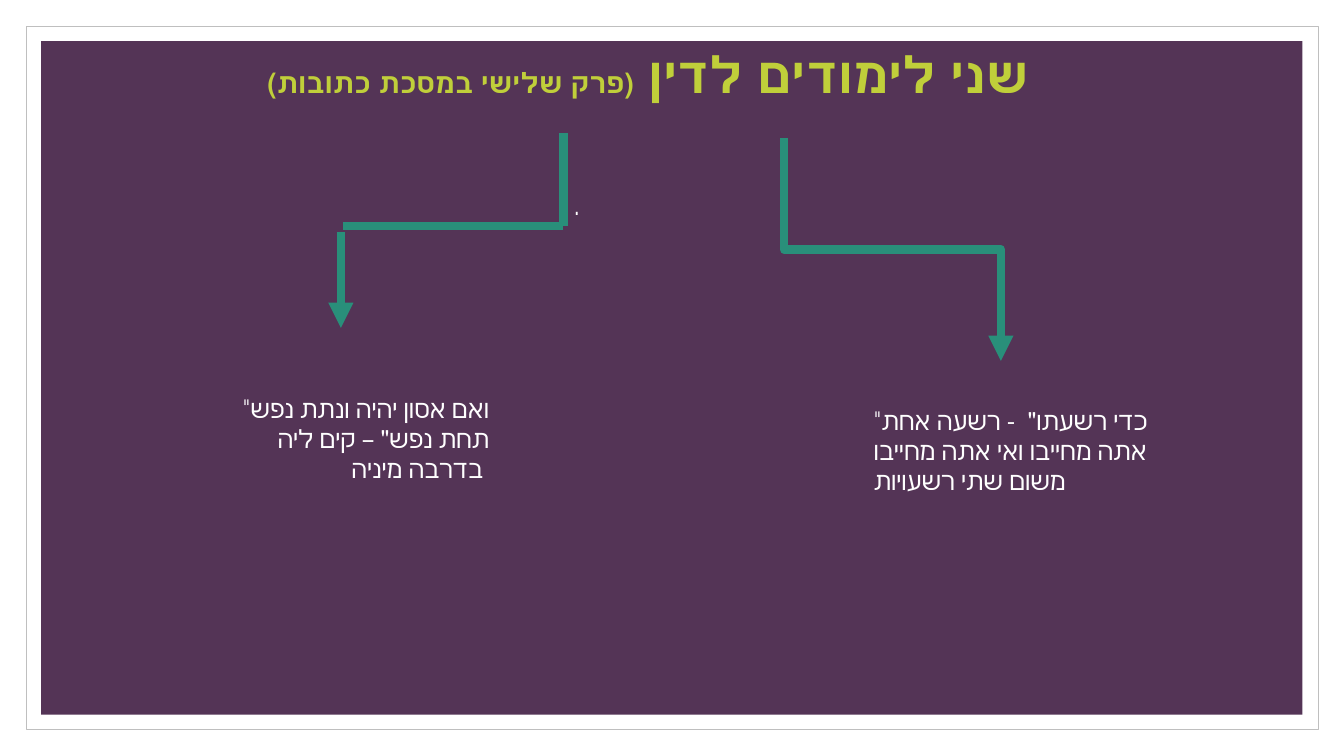
"""Build the slide on the two sources for the ruling."""
from dataclasses import dataclass

from lxml import etree
from pptx import Presentation
from pptx.dml.color import RGBColor
from pptx.enum.shapes import MSO_CONNECTOR, MSO_SHAPE
from pptx.enum.text import MSO_ANCHOR, MSO_AUTO_SIZE, PP_ALIGN
from pptx.oxml.ns import qn
from pptx.util import Cm, Pt

RECT = MSO_SHAPE.RECTANGLE
LINE, BENT = MSO_CONNECTOR.STRAIGHT, MSO_CONNECTOR.ELBOW
LEFT, MID, RIGHT = PP_ALIGN.LEFT, PP_ALIGN.CENTER, PP_ALIGN.RIGHT


@dataclass(frozen=True)
class Theme:
    white: RGBColor = RGBColor(0xFF, 0xFF, 0xFF)
    edge: RGBColor = RGBColor(0xBF, 0xBF, 0xBF)
    plum: RGBColor = RGBColor(0x54, 0x34, 0x56)
    lime: RGBColor = RGBColor(0xC0, 0xCF, 0x3A)
    teal: RGBColor = RGBColor(0x29, 0x8F, 0x7A)
    font: str = "TeX Gyre Adventor"
    head: Pt = Pt(36)
    sub: Pt = Pt(20)
    body: Pt = Pt(18)
    thin: Pt = Pt(0.5)
    thick: Pt = Pt(6)


theme = Theme()


def style(run, size, color):
    run.font.name = theme.font
    run.font.size = size
    run.font.color.rgb = color


def link(kind, ends, arrow):
    line = slide.shapes.add_connector(kind, *map(Cm, ends))
    line.line.color.rgb = theme.teal
    line.line.width = theme.thick
    props = line.element.spPr
    if arrow:
        etree.SubElement(props.find(qn("a:ln")), qn("a:tailEnd"), type="triangle")
    etree.SubElement(props, qn("a:effectLst"))
    return line


deck = Presentation()
deck.slide_width, deck.slide_height = Cm(33.87), Cm(19.05)
slide = deck.slides.add_slide(deck.slide_layouts[5])

panels = [
    ((0.66, 0.66, 32.56, 17.73), theme.white, theme.edge),
    ((1.04, 1.04, 31.78, 16.97), theme.plum, None),
]
for box, fill, edge in panels:
    panel = slide.shapes.add_shape(RECT, *map(Cm, box))
    panel.shadow.inherit = False
    panel.fill.solid()
    panel.fill.fore_color.rgb = fill
    if edge:
        panel.line.color.rgb = edge
        panel.line.width = theme.thin
    else:
        panel.line.fill.background()

title = slide.shapes.title
slide.shapes.element.append(title.element)
title.left, title.top, title.width, title.height = map(Cm, (3.19, 0.76, 26.29, 2.39))
frame = title.text_frame
frame.auto_size = MSO_AUTO_SIZE.NONE
frame.vertical_anchor = MSO_ANCHOR.MIDDLE
para = frame.paragraphs[0]
para.alignment = MID
para.line_spacing = 0.9
para.element.get_or_add_pPr().set("rtl", "1") if hasattr(para, "element") else para._p.get_or_add_pPr().set("rtl", "1")
for words, size in [
    ("שני לימודים לדין ", theme.head),
    ("(פרק שלישי במסכת כתובות)", theme.sub),
]:
    run = para.add_run()
    run.text = words
    style(run, size, theme.lime)
    run.font.bold = True
    rim = etree.Element(qn("a:ln"), w=str(Pt(1)))
    paint = etree.SubElement(rim, qn("a:solidFill"))
    etree.SubElement(paint, qn("a:srgbClr"), val=str(theme.teal))
    run.font.fill
    run._r.get_or_add_rPr().insert(0, rim)

notes = [
    (".", (14.2, 4.67, 16.94, 1.02), LEFT),
    (
        "\"כדי רשעתו\"  - רשעה אחת אתה מחייבו ואי אתה מחייבו משום שתי רשעויות",
        (21.77, 10.08, 7.52, 2.57),
        LEFT,
    ),
    (
        "\"ואם אסון יהיה ונתת נפש תחת נפש\" – קים ליה בדרבה מיניה ",
        (4.83, 9.78, 7.75, 2.57),
        RIGHT,
    ),
]
for words, box, align in notes:
    frame = slide.shapes.add_textbox(*map(Cm, box)).text_frame
    frame.word_wrap = True
    frame.auto_size = MSO_AUTO_SIZE.SHAPE_TO_FIT_TEXT
    para = frame.paragraphs[0]
    para.text = words
    para.alignment = align
    style(para.runs[0], theme.body, theme.white)

bend = link(BENT, (25.3, 3.56, 19.69, 9.02), True)
bend.element.spPr.xfrm.set("rot", "16200000")
for ends, arrow in [
    ((14.2, 3.35, 14.2, 5.69), False),
    ((8.64, 5.69, 14.2, 5.69), False),
    ((8.59, 5.84, 8.59, 8.26), True),
]:
    link(LINE, ends, arrow)

deck.save("out.pptx")
